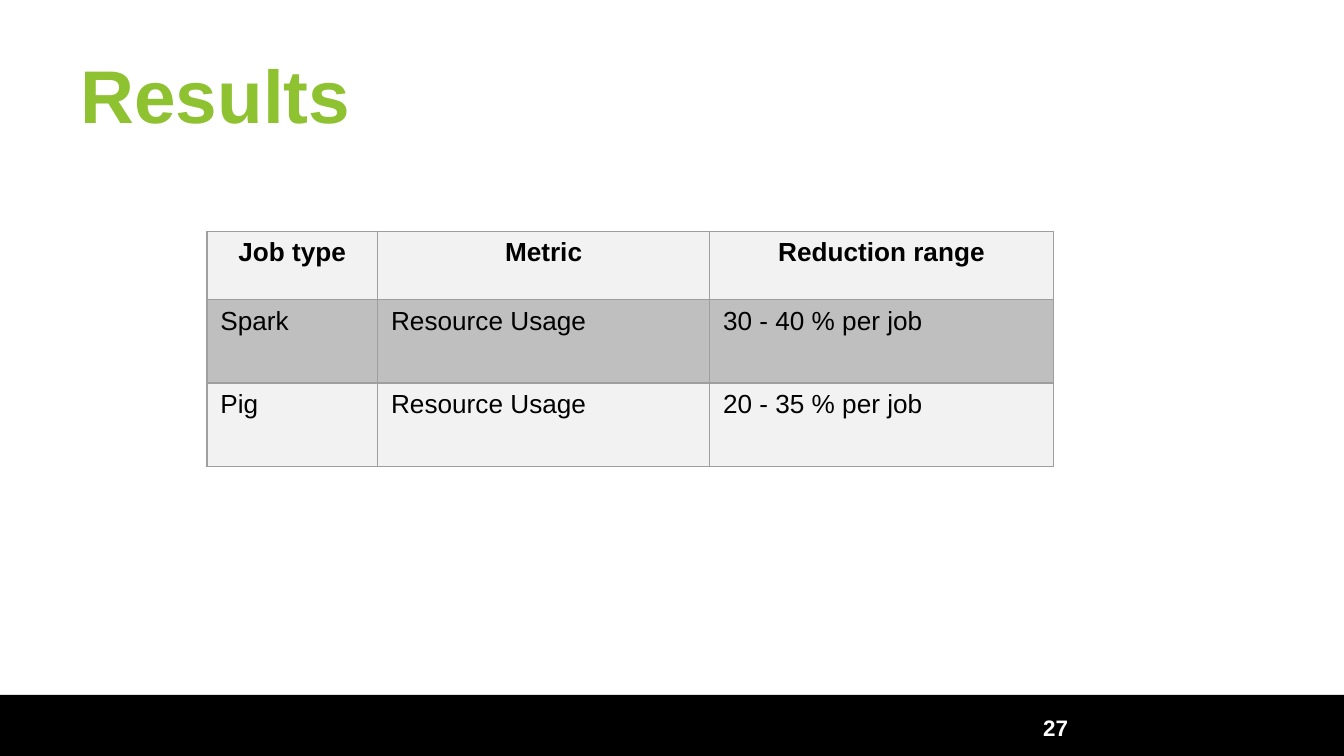
from lxml import etree
from pptx import Presentation
from pptx.dml.color import RGBColor
from pptx.enum.shapes import MSO_SHAPE
from pptx.enum.text import MSO_ANCHOR, PP_ALIGN
from pptx.oxml.ns import qn
from pptx.util import Inches, Pt

RECT = MSO_SHAPE.RECTANGLE
MIDDLE = MSO_ANCHOR.MIDDLE
LEFT, CENTER = PP_ALIGN.LEFT, PP_ALIGN.CENTER
WIDTH = 10
HEIGHT = WIDTH * 9 / 16
COLORS = {
    "title": "8FC230", "text": "000000", "band": "000000", "number": "FFFFFF",
    "light": "F2F2F2", "dark": "BFBFBF", "border": "9E9E9E",
}
ROWS = [
    ("Job type", "Metric", "Reduction range"),
    ("Spark", "Resource Usage", "30 - 40 % per job"),
    ("Pig", "Resource Usage", "20 - 35 % per job"),
]
COLS = [1.27, 2.47, 2.56]
TALL = [0.51, 0.62, 0.62]


def color(name):
    return RGBColor.from_string(COLORS[name])


def write(frame, text, size, tint, bold=True, align=LEFT):
    frame.text = text
    par = frame.paragraphs[0]
    par.alignment = align
    font = par.font
    font.name, font.size, font.bold = "Arial", Pt(size), bold
    font.color.rgb = color(tint)


def add_title(slide, left, top, width, height):
    title = slide.shapes.title
    title.left, title.top = Inches(left), Inches(top)
    title.width, title.height = Inches(width), Inches(height)
    frame = title.text_frame
    frame.vertical_anchor = MIDDLE
    frame.margin_top = frame.margin_bottom = Inches(0.1)
    write(frame, "Results", 40, "title")


def add_footer(slide, left, top, width, height):
    band = slide.shapes.add_shape(
        RECT, Inches(left), Inches(top), Inches(width), Inches(height))
    band.shadow.inherit = False
    band.fill.solid()
    band.fill.fore_color.rgb = color("band")
    band.line.fill.background()

    box = slide.shapes.add_textbox(
        Inches(left + 7.58), Inches(top + 0.07), Inches(0.55), Inches(0.35))
    frame = box.text_frame
    frame.word_wrap = True
    frame.vertical_anchor = MIDDLE
    write(frame, "27", 12, "number", align=CENTER)


def add_borders(cell):
    """Draw a thin line on all four sides, placed before the cell's fill."""
    props = cell._tc.get_or_add_tcPr()
    for i, side in enumerate(("lnL", "lnR", "lnT", "lnB")):
        line = etree.Element(qn(f"a:{side}"), w=str(Pt(0.75)))
        fill = etree.SubElement(line, qn("a:solidFill"))
        etree.SubElement(fill, qn("a:srgbClr"), val=COLORS["border"])
        props.insert(i, line)


def add_results(slide, left, top):
    table = slide.shapes.add_table(
        len(ROWS), len(COLS), Inches(left), Inches(top),
        Inches(sum(COLS)), Inches(sum(TALL))).table
    for col, width in zip(table.columns, COLS):
        col.width = Inches(width)
    for r, texts in enumerate(ROWS):
        table.rows[r].height = Inches(TALL[r])
        head = r == 0
        for c, text in enumerate(texts):
            cell = table.cell(r, c)
            cell.fill.solid()
            cell.fill.fore_color.rgb = color("dark" if r % 2 else "light")
            add_borders(cell)
            write(cell.text_frame, text, 14, "text", head,
                  CENTER if head else LEFT)


def main():
    prs = Presentation()
    prs.slide_width, prs.slide_height = Inches(WIDTH), Inches(HEIGHT)
    slide = prs.slides.add_slide(prs.slide_layouts[5])
    add_footer(slide, 0, 5.17, WIDTH, HEIGHT - 5.17)
    add_title(slide, 0.5, 0.23, 9, 0.94)
    add_results(slide, 1.54, 1.72)
    prs.save("out.pptx")


if __name__ == "__main__":
    main()
